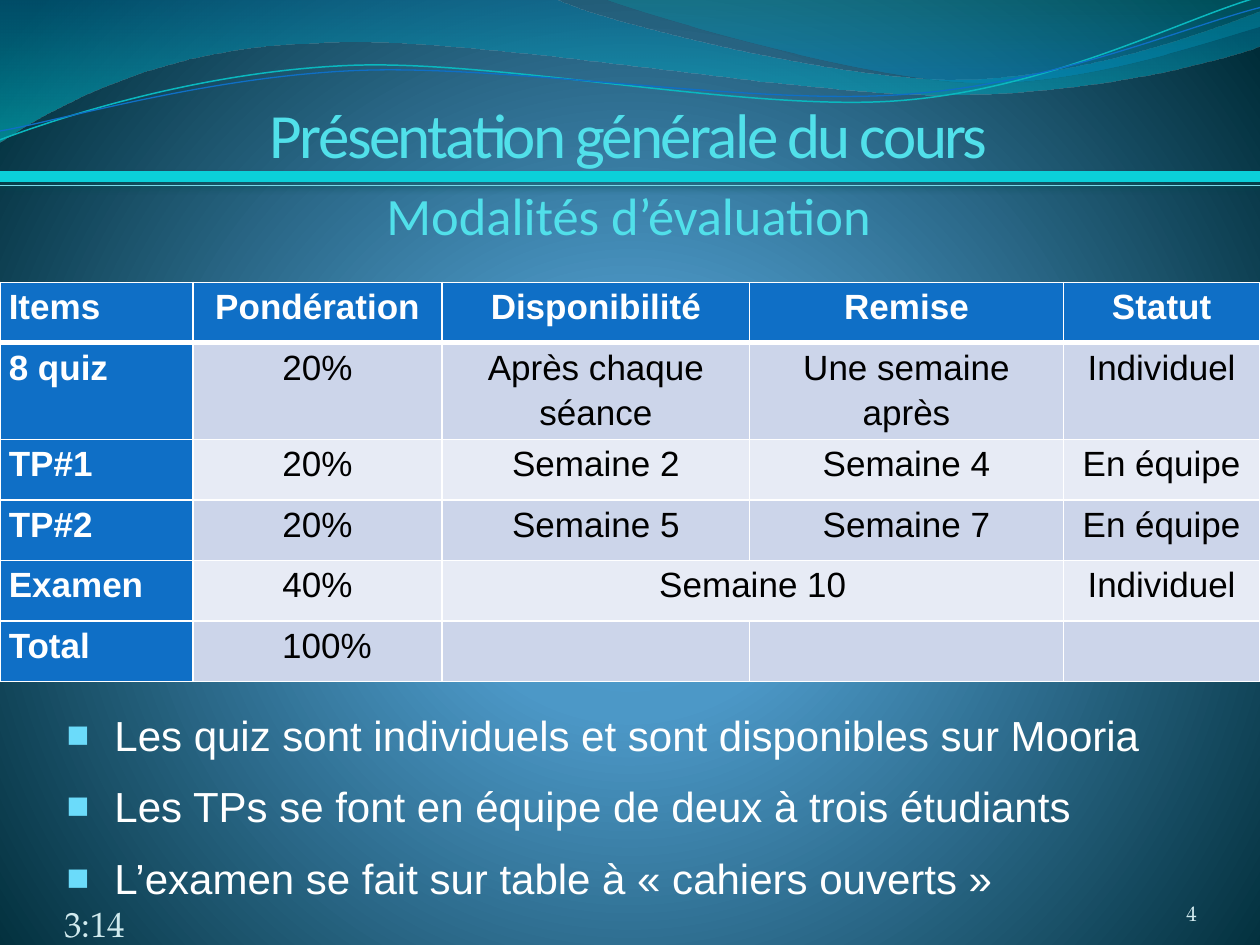
import pptx
import pptx.dml.color
import pptx.enum.shapes
import pptx.enum.text
import pptx.oxml
import pptx.oxml.ns
import pptx.util

Inches = pptx.util.Inches
Pt = pptx.util.Pt
RGBColor = pptx.dml.color.RGBColor
ALIGN = pptx.enum.text.PP_ALIGN
ANCHOR = pptx.enum.text.MSO_ANCHOR
qn = pptx.oxml.ns.qn
NAMESPACE = 'xmlns:a="http://schemas.openxmlformats.org/drawingml/2006/main"'

WHITE = RGBColor(0xFF, 0xFF, 0xFF)
BLACK = RGBColor(0, 0, 0)
BLUE = RGBColor(0x0F, 0x6F, 0xC6)
TEAL = RGBColor(0x0A, 0xB8, 0xBF)
TURQUOISE = RGBColor(0x0B, 0xD0, 0xD9)
PALE_TURQUOISE = RGBColor(0x77, 0xD9, 0xE8)
SHADOW = RGBColor(0x02, 0x4B, 0x4E)
HEADING = RGBColor(0x51, 0xE0, 0xEA)
FOOTER = RGBColor(0xD1, 0xEA, 0xEE)
BULLET = RGBColor(0x6B, 0xDB, 0xFA)
BAND_DARK = RGBColor(0xCC, 0xD5, 0xEA)
BAND_LIGHT = RGBColor(0xE7, 0xEB, 0xF5)

PAGE_STOPS = [(0, "4AA0D6", 100), (25, "4C98C7", 100), (100, "002C38", 100)]
PAGE_SHADE = ('<a:path path="circle"><a:fillToRect l="10000" t="110000" '
              'r="10000" b="100000"/></a:path>')
DOWNWARD = '<a:lin ang="5400000" scaled="0"/>'

WIDE_BAND = [[(0, 0)], [(4.4, -0.01)],
             [(4.76, 0.17), (6.64, 0.63), (7.58, 0.63)],
             [(8.53, 0.63), (9.58, 0.26), (10, 0.09)], [(10.01, 0.36)],
             [(9.83, 0.44), (8.7, 0.76), (7.46, 0.75)],
             [(6.22, 0.75), (3.82, 0.28), (2.57, 0.34)],
             [(1.29, 0.36), (0.46, 0.83), (-0.01, 1.13)]]
RIGHT_BAND = [[(4.79, -0.01)], [(5.09, 0.11), (6.82, 0.62), (7.69, 0.65)],
              [(8.56, 0.69), (9.61, 0.32), (10, 0.21)], [(10, 0)]]
TEAL_WAVE = [[(0, 1.11)], [(0.48, 0.93), (1.58, 0.57), (2.77, 0.52)],
             [(3.95, 0.47), (5.93, 0.89), (7.13, 0.8)],
             [(8.33, 0.71), (9.38, 0.15), (9.98, -0.02)]]
BLUE_WAVE = [[(0, 1.04)], [(0.47, 0.96), (1.64, 0.61), (2.83, 0.56)],
             [(4.03, 0.51), (5.97, 0.84), (7.17, 0.75)],
             [(8.36, 0.67), (9.41, 0.21), (10, 0.06)]]

ROWS = [["Items", "Pondération", "Disponibilité", "Remise", "Statut"],
        ["8 quiz", "20%", "Après chaque séance", "Une semaine après", "Individuel"],
        ["TP#1", "20%", "Semaine 2", "Semaine 4", "En équipe"],
        ["TP#2", "20%", "Semaine 5", "Semaine 7", "En équipe"],
        ["Examen", "40%", "Semaine 10", "", "Individuel"],
        ["Total", "100%", "", "", ""]]
COLUMN_WIDTHS = [1.53, 1.98, 2.44, 2.49, 1.56]
ROW_HEIGHT = 0.48
NOTES = ["Les quiz sont individuels et sont disponibles sur Mooria",
         "Les TPs se font en équipe de deux à trois étudiants",
         "L’examen se fait sur table à «\u00a0cahiers ouverts\u00a0»"]


def set_gradient(parent, stops, shade):
    """Replace the solid fill under parent by a gradient."""
    marks = "".join(
        f'<a:gs pos="{place * 1000}"><a:srgbClr val="{color}">'
        f'<a:alpha val="{opacity * 1000}"/></a:srgbClr></a:gs>'
        for place, color, opacity in stops)
    gradient = pptx.oxml.parse_xml(
        f'<a:gradFill {NAMESPACE} rotWithShape="1"><a:gsLst>{marks}</a:gsLst>'
        f'{shade}</a:gradFill>')
    parent.replace(parent.find(qn("a:solidFill")), gradient)


def add_outline(page, box, segments, close):
    """Draw an outline of lines and cubic curves from the corner of the box."""
    points = [(Inches(box[0] + x), Inches(box[1] + y))
              for segment in segments for x, y in segment]
    builder = page.shapes.build_freeform(*points[0])
    builder.add_line_segments(points[1:], close=close)
    shape = builder.convert_to_shape()
    shape.shadow.inherit = False
    lines = iter(list(shape._element.iter(qn("a:lnTo"))))
    for segment in segments[1:]:
        members = [next(lines) for _ in segment]
        if len(members) == 3:
            curve = pptx.oxml.parse_xml(f'<a:cubicBezTo {NAMESPACE}/>')
            members[0].addprevious(curve)
            for line in members:
                curve.append(line[0])
                line.getparent().remove(line)
    return shape


def add_waves(page, box):
    """Draw the two bands and two thin waves of the header."""
    for segments, stops in (
            (WIDE_BAND, [(0, "0074A1", 45), (100, "00C6CF", 55)]),
            (RIGHT_BAND, [(0, "00A1A9", 30), (80, "008BBF", 45)])):
        band = add_outline(page, box, segments, True)
        band.line.fill.background()
        band.fill.solid()
        set_gradient(band._element.spPr, stops, DOWNWARD)
    for segments, color, width in ((TEAL_WAVE, TEAL, 0.85), (BLUE_WAVE, BLUE, 0.75)):
        wave = add_outline(page, box, segments, False)
        wave.fill.background()
        wave.line.color.rgb = color
        wave.line.width = Pt(width)


def format_text(frame, size, font, color, align, bold=False):
    """Format every paragraph and run of a text frame."""
    for para in frame.paragraphs:
        para.alignment = align
        for span in para.runs:
            span.font.size = Pt(size)
            span.font.name = font
            span.font.color.rgb = color
            span.font.bold = bold


def fill_label(shape, box, text, size, font, color, align, inset=0):
    """Place a shape in the box with one bottom-anchored line of text."""
    shape.left, shape.top, shape.width, shape.height = map(Inches, box)
    frame = shape.text_frame
    frame.text = text
    frame.word_wrap = True
    frame.vertical_anchor = ANCHOR.BOTTOM
    frame.margin_left = frame.margin_top = frame.margin_bottom = 0
    frame.margin_right = Inches(inset)
    format_text(frame, size, font, color, align)


def add_label(page, box, *style):
    """Add a text box holding one line of text."""
    fill_label(page.shapes.add_textbox(0, 0, 0, 0), box, *style)


def add_heading(page, box):
    """Place the title, its two rules and the subtitle."""
    left, top, width, height = box
    style = ("Calibri", HEADING, ALIGN.CENTER, 0.02)
    title = page.shapes.title
    fill_label(title, (left, top, width, 0.72), "Présentation générale du cours", 36, *style)
    title.text_frame.paragraphs[0].runs[0].font._element.set("spc", "-150")
    shadow = (f'<a:outerShdw blurRad="{Pt(4.5)}" dist="{Pt(3)}" dir="5400000" '
              f'rotWithShape="0"><a:srgbClr val="{SHADOW}"><a:alpha val="48000"/>'
              '</a:srgbClr></a:outerShdw>')
    for offset, color, weight, effect in ((0.76, TURQUOISE, 6, shadow),
                                          (0.83, PALE_TURQUOISE, 0.75, "")):
        y = Inches(top + offset)
        rule = page.shapes.add_connector(pptx.enum.shapes.MSO_CONNECTOR.STRAIGHT,
                                         Inches(left), y, Inches(left + width), y)
        rule.line.color.rgb = color
        rule.line.width = Pt(weight)
        rule._element.spPr.append(pptx.oxml.parse_xml(
            f'<a:effectLst {NAMESPACE}>{effect}</a:effectLst>'))
    add_label(page, (left, top + height - 0.72, width, 0.72),
              "Modalités d’évaluation", 30, *style)


def set_borders(cell, top, bottom):
    """Give a cell white borders, with its own top and bottom widths."""
    properties = cell._tc.get_or_add_tcPr()
    for index, (side, width) in enumerate((("L", 1), ("R", 1), ("T", top), ("B", bottom))):
        properties.insert(index, pptx.oxml.parse_xml(
            f'<a:ln{side} {NAMESPACE} w="{Pt(width)}"><a:solidFill>'
            f'<a:srgbClr val="{WHITE}"/></a:solidFill></a:ln{side}>'))


def add_evaluation_table(page, box):
    """Add the table of evaluated items."""
    holder = page.shapes.add_table(len(ROWS), len(COLUMN_WIDTHS), *map(Inches, box))
    table = holder.table
    for column, width in zip(table.columns, COLUMN_WIDTHS):
        column.width = Inches(width)
    for row in table.rows:
        row.height = Inches(ROW_HEIGHT)
    holder.height = Inches(box[3])
    for r, texts in enumerate(ROWS):
        for c, text in enumerate(texts):
            cell = table.cell(r, c)
            heading = r == 0 or c == 0
            cell.text = text
            cell.margin_left = cell.margin_right = Inches(0.07)
            cell.margin_top = cell.margin_bottom = 0
            cell.fill.solid()
            band = BAND_DARK if r % 2 else BAND_LIGHT
            cell.fill.fore_color.rgb = BLUE if heading else band
            set_borders(cell, 3 if r == 1 else 1, 1 if r else 3)
            cell.text_frame.paragraphs[0].line_spacing = 1.15
            format_text(cell.text_frame, 20, "Arial", WHITE if heading else BLACK,
                        ALIGN.CENTER if c else ALIGN.LEFT, heading)
    table.cell(5, 1).margin_left = Inches(0.22)
    table.cell(4, 2).merge(table.cell(4, 3))


def add_notes(page, box):
    """Add the bulleted remarks below the table."""
    frame = page.shapes.add_textbox(*map(Inches, box)).text_frame
    frame.word_wrap = True
    frame.text = "\n".join(NOTES)
    format_text(frame, 24, "Arial", WHITE, ALIGN.LEFT)
    for index, para in enumerate(frame.paragraphs):
        para.space_before = Pt(12 if index else 0)
        properties = para._p.get_or_add_pPr()
        properties.set("marL", str(Inches(0.38)))
        properties.set("indent", str(Inches(-0.38)))
        for mark in (f'<a:buClr {NAMESPACE}><a:srgbClr val="{BULLET}"/></a:buClr>',
                     f'<a:buSzPct {NAMESPACE} val="90000"/>',
                     f'<a:buFont {NAMESPACE} typeface="Arial"/>',
                     f'<a:buChar {NAMESPACE} char="■"/>'):
            properties.append(pptx.oxml.parse_xml(mark))


def add_footer(page, box):
    """Add the time on the left and the page number on the right."""
    left, top, width, height = box
    style = ("TeX Gyre Pagella", FOOTER)
    add_label(page, (left + width - 0.83, top, 0.83, 0.4), "4", 12, *style, ALIGN.RIGHT)
    add_label(page, (left, top + height - 0.4, 2.33, 0.4), "3:14", 20, *style, ALIGN.LEFT)


def main():
    """Build the slide and save the deck."""
    deck = pptx.Presentation()
    deck.slide_width, deck.slide_height = Inches(10), Inches(7.5)
    page = deck.slides.add_slide(deck.slide_layouts[5])
    page.background.fill.solid()
    set_gradient(page._element.find(".//" + qn("p:bgPr")), PAGE_STOPS, PAGE_SHADE)
    add_waves(page, (0, 0, 10, 1.13))
    add_notes(page, (0.43, 5.58, 9.21, 1.55))
    add_footer(page, (0.51, 6.95, 8.99, 0.55))
    add_heading(page, (0, 0.64, 10, 1.31))
    add_evaluation_table(page, (0, 2.24, 10, 3.12))
    deck.save("out.pptx")


if __name__ == "__main__":
    main()
